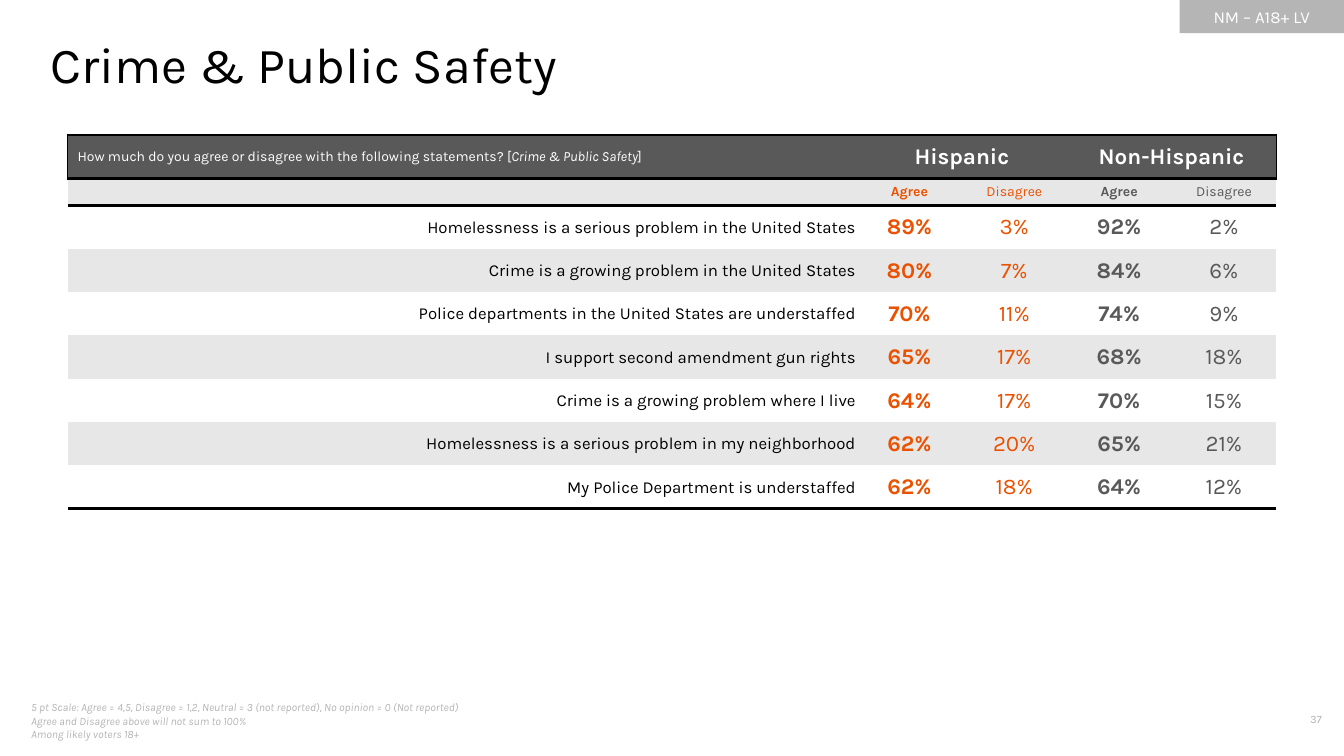
from lxml import etree
from pptx import Presentation
from pptx.dml.color import RGBColor
from pptx.enum import shapes, text
from pptx.oxml import ns
from pptx.util import Inches, Pt

FONT = "Karla"
COLORS = {"black": "000000", "white": "FFFFFF", "header": "595959",
          "band": "E7E7E7", "orange": "EA5101", "muted": "B5B5B5"}
LEFT, CENTER, RIGHT = text.PP_ALIGN.LEFT, text.PP_ALIGN.CENTER, text.PP_ALIGN.RIGHT
MIDDLE = text.MSO_ANCHOR.MIDDLE
NO_STYLE = "{2D5ABB26-0587-4C30-8999-92F81FD0307C}"
RULE = 2.25

FOOTNOTES = [
    "5 pt Scale: Agree = 4,5, Disagree = 1,2, Neutral = 3 (not reported), No opinion = 0 (Not reported)",
    "Agree and Disagree above will not sum to 100%",
    "Among likely voters 18+",
]
RESULTS = [
    ("Homelessness is a serious problem in the United States", 89, 3, 92, 2),
    ("Crime is a growing problem in the United States", 80, 7, 84, 6),
    ("Police departments in the United States are understaffed", 70, 11, 74, 9),
    ("I support second amendment gun rights", 65, 17, 68, 18),
    ("Crime is a growing problem where I live", 64, 17, 70, 15),
    ("Homelessness is a serious problem in my neighborhood", 62, 20, 65, 21),
    ("My Police Department is understaffed", 62, 18, 64, 12),
]
# Agree is bold, Disagree regular; each group has its colour
ANSWER_STYLES = [("orange", True), ("orange", False), ("header", True), ("header", False)]


def color(name):
    return RGBColor.from_string(COLORS[name])


def format_text(text_frame, size, color_name, align=LEFT, bold=False, italic=False):
    for paragraph in text_frame.paragraphs:
        paragraph.alignment = align
        for run in paragraph.runs:
            run.font.name, run.font.size = FONT, Pt(size)
            run.font.bold, run.font.italic = bold, italic
            run.font.color.rgb = color(color_name)


def add_label(slide, box, content, size, color_name, **style):
    shape = slide.shapes.add_textbox(*map(Inches, box))
    shape.text_frame.word_wrap = True
    shape.text_frame.text = content
    format_text(shape.text_frame, size, color_name, **style)
    return shape


def add_tag(slide, box, content):
    shape = slide.shapes.add_shape(shapes.MSO_SHAPE.RECTANGLE, *map(Inches, box))
    shape.shadow.inherit = False
    shape.fill.solid()
    shape.fill.fore_color.rgb = color("muted")
    shape.line.fill.background()
    shape.text_frame.vertical_anchor = MIDDLE
    shape.text_frame.text = content
    format_text(shape.text_frame, 12, "white", CENTER)


def set_title(slide, box, content):
    title = slide.shapes.title
    title.left, title.top, title.width, title.height = map(Inches, box)
    frame = title.text_frame
    frame.margin_left = frame.margin_right = frame.margin_top = frame.margin_bottom = 0
    frame.vertical_anchor = text.MSO_ANCHOR.TOP
    frame.word_wrap = True
    frame.auto_size = text.MSO_AUTO_SIZE.NONE
    frame.text = content
    format_text(frame, 36, "black")


def set_cell(cell, content, fill, size, color_name, align=CENTER, bold=False, borders=None):
    # Borders come before the fill in the cell properties
    properties = cell._tc.get_or_add_tcPr()
    for side in "LRTB":
        if side in (borders or {}):
            line = etree.SubElement(properties, ns.qn(f"a:ln{side}"), w=str(Pt(borders[side])))
            solid = etree.SubElement(line, ns.qn("a:solidFill"))
            etree.SubElement(solid, ns.qn("a:srgbClr"), val=COLORS["black"])
    cell.fill.solid()
    cell.fill.fore_color.rgb = color(fill)
    cell.vertical_anchor = MIDDLE
    if content:
        cell.text_frame.text = content
        format_text(cell.text_frame, size, color_name, align, bold)
    else:
        paragraph = cell.text_frame.paragraphs[0]
        etree.SubElement(paragraph._p, ns.qn("a:endParaRPr"), sz=str(size * 100))


def fill_header(table):
    rules = {"T": RULE, "B": RULE}
    question = table.cell(0, 0)
    set_cell(question, "How much do you agree or disagree with the following statements? [",
             "header", 10, "white", LEFT, borders={"L": 1, **rules})
    paragraph = question.text_frame.paragraphs[0]
    for part in ("Crime & Public Safety", "]"):
        paragraph.add_run().text = part
    format_text(question.text_frame, 10, "white")
    paragraph.runs[1].font.italic = True

    groups = ["Hispanic", "", "Non-Hispanic", ""]
    for column, group in enumerate(groups, 1):
        edge = {"R": 1} if column > 2 else {}
        set_cell(table.cell(0, column), group, "header", 16, "white", bold=True,
                 borders={**edge, **rules})
    for column in (1, 3):
        table.cell(0, column).merge(table.cell(0, column + 1))

    set_cell(table.cell(1, 0), "", "band", 10, "black", borders={"T": RULE})
    for column, (color_name, bold) in enumerate(ANSWER_STYLES, 1):
        set_cell(table.cell(1, column), "Agree" if bold else "Disagree", "band", 10,
                 color_name, bold=bold, borders={"T": RULE})


def fill_results(table):
    for index, (statement, *values) in enumerate(RESULTS):
        row = index + 2
        fill = "band" if index % 2 else "white"
        borders = {"B": RULE} if index == len(RESULTS) - 1 else {}
        set_cell(table.cell(row, 0), statement, fill, 12, "black", RIGHT, borders=borders)
        for column, (value, (color_name, bold)) in enumerate(zip(values, ANSWER_STYLES), 1):
            set_cell(table.cell(row, column), f"{value}%", fill, 16, color_name,
                     bold=bold, borders=borders)
        for cell in table.rows[row].cells:
            cell.margin_left = cell.margin_right = cell.margin_top = Inches(0.01)
            cell.margin_bottom = 0


def add_results_table(slide):
    widths = [7.83] + [1.04] * 4
    heights = [0.43, 0.25] + [0.43] * len(RESULTS)
    frame = slide.shapes.add_table(len(heights), len(widths), Inches(0.67), Inches(1.34),
                                   Inches(sum(widths)), Inches(sum(heights)))
    table = frame.table
    table.first_row = table.horz_banding = False
    table._tbl.tblPr.find(ns.qn("a:tableStyleId")).text = NO_STYLE
    for column, width in zip(table.columns, widths):
        column.width = Inches(width)
    for row, height in zip(table.rows, heights):
        row.height = Inches(height)
    fill_header(table)
    fill_results(table)


def main():
    presentation = Presentation()
    presentation.slide_width, presentation.slide_height = Inches(13.33), Inches(7.5)
    slide = presentation.slides.add_slide(presentation.slide_layouts[5])

    # Footer and corner tag
    notes = add_label(slide, (0.21, 6.95, 5.11, 0.4), "\n".join(FOOTNOTES), 8, "muted", italic=True)
    notes.text_frame.vertical_anchor = MIDDLE
    add_label(slide, (12.33, 7.02, 0.88, 0.27), "37", 8, "muted", align=RIGHT)
    add_tag(slide, (11.7, 0, 1.63, 0.33), "NM – A18+ LV")

    # Title and results
    set_title(slide, (0.5, 0.33, 12, 0.61), "Crime & Public Safety")
    add_results_table(slide)
    presentation.save("out.pptx")


if __name__ == "__main__":
    main()
